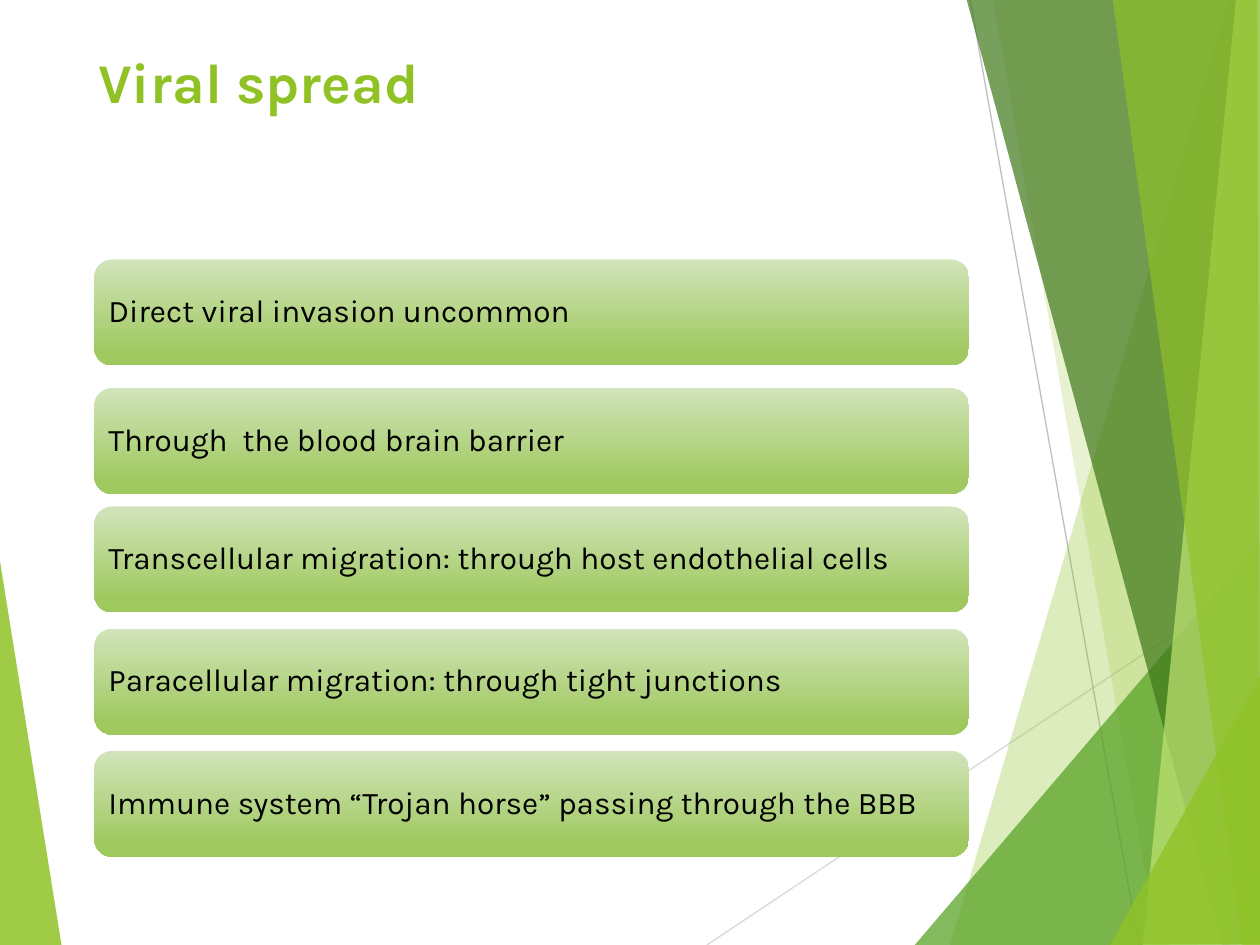
from dataclasses import dataclass

from lxml.etree import SubElement
from pptx import Presentation
from pptx.dml.color import RGBColor
from pptx.enum.shapes import MSO_CONNECTOR, MSO_SHAPE
from pptx.enum.text import MSO_ANCHOR, PP_ALIGN
from pptx.oxml.ns import qn
from pptx.slide import Slide
from pptx.util import Inches, Pt

Point = tuple[float, float]


@dataclass(frozen=True)
class Theme:
    font: str = "Karla"
    title_size: int = 32
    body_size: int = 18
    title: str = "90C226"
    text: str = "000000"
    lime: str = "90C226"
    green: str = "54A021"
    forest: str = "3F7819"
    pale: str = "C0E474"
    card_top: str = "D2E4BB"
    card_bottom: str = "9FC95F"
    light_line: str = "D9D9D9"
    dark_line: str = "BFBFBF"


@dataclass(frozen=True)
class Facet:
    color: str
    opacity: int
    points: tuple[Point, ...]


@dataclass(frozen=True)
class Ray:
    color: str
    start: Point
    end: Point


@dataclass(frozen=True)
class Card:
    top: float
    text: str


THEME = Theme()

LEFT_FACET = Facet(THEME.lime, 85, ((-0.01, 4.39), (0.49, 7.51), (-0.01, 7.5)))

RAYS = (
    Ray(THEME.light_line, (5.61, 7.5), (10.01, 4.57)),
    Ray(THEME.dark_line, (7.7, 0), (9.04, 7.5)),
)

RIGHT_FACETS = (
    Facet(THEME.lime, 30, ((9.75, 0), (7.54, 7.5), (10.02, 7.51), (10.01, 0.01))),
    Facet(THEME.lime, 20, ((7.88, -0.01), (9.19, 7.5), (10.01, 7.5), (10.01, -0.01))),
    Facet(THEME.green, 72, ((7.26, 7.5), (10, 4.29), (10.01, 7.5))),
    Facet(THEME.forest, 70, ((7.67, -0.01), (9.7, 7.5), (10.01, 7.49), (10.01, -0.01))),
    Facet(THEME.pale, 70, ((9.81, -0.01), (9.07, 7.5), (10.01, 7.5), (10, -0.01))),
    Facet(THEME.lime, 65, ((8.83, -0.01), (9.86, 7.5), (10, 7.5), (9.98, -0.01))),
    Facet(THEME.lime, 80, ((8.81, 7.5), (10.01, 5.35), (10.01, 7.49))),
)

CARDS = (
    Card(2.06, "Direct viral invasion uncommon"),
    Card(3.08, "Through  the blood brain barrier"),
    Card(4.02, "Transcellular migration: through host endothelial cells"),
    Card(4.99, "Paracellular migration: through tight junctions"),
    Card(5.96, "Immune system “Trojan horse” passing through the BBB"),
)


def draw_facet(page: Slide, facet: Facet) -> None:
    corners = [(Inches(x), Inches(y)) for x, y in facet.points]
    builder = page.shapes.build_freeform(*corners[0])
    builder.add_line_segments(corners[1:], close=True)
    shape = builder.convert_to_shape()
    shape.shadow.inherit = False
    shape.line.fill.background()
    shape.fill.solid()
    shape.fill.fore_color.rgb = RGBColor.from_string(facet.color)
    for color in shape.element.spPr.iter(qn("a:srgbClr")):
        SubElement(color, qn("a:alpha"), val=str(facet.opacity * 1000))


def draw_ray(page: Slide, ray: Ray) -> None:
    ends = [Inches(value) for value in ray.start + ray.end]
    line = page.shapes.add_connector(MSO_CONNECTOR.STRAIGHT, *ends)
    line.line.color.rgb = RGBColor.from_string(ray.color)
    line.line.width = Pt(0.75)
    SubElement(line.element.spPr, qn("a:effectLst"))


def draw_title(page: Slide, text: str) -> None:
    title = page.shapes.title
    title.left, title.top = Inches(0.73), Inches(0.33)
    title.width, title.height = Inches(6.94), Inches(1.44)
    frame = title.text_frame
    frame.text = text
    frame.vertical_anchor = MSO_ANCHOR.TOP
    frame.margin_left = frame.margin_right = Inches(0.05)
    frame.margin_top = frame.margin_bottom = Inches(0.05)
    para = frame.paragraphs[0]
    para.alignment = PP_ALIGN.LEFT
    para.font.name = THEME.font
    para.font.size = Pt(THEME.title_size)
    para.font.bold = True
    para.font.color.rgb = RGBColor.from_string(THEME.title)


def draw_card(page: Slide, card: Card) -> None:
    box = page.shapes.add_shape(
        MSO_SHAPE.ROUNDED_RECTANGLE,
        Inches(0.75), Inches(card.top), Inches(6.94), Inches(0.84),
    )
    box.shadow.inherit = False
    box.line.fill.background()
    box.fill.gradient()
    box.fill.gradient_angle = 270
    shades = ((0, THEME.card_top), (0.88, THEME.card_bottom))
    for stop, (position, color) in zip(box.fill.gradient_stops, shades):
        stop.position = position
        stop.color.rgb = RGBColor.from_string(color)
    frame = box.text_frame
    frame.text = card.text
    frame.word_wrap = True
    frame.vertical_anchor = MSO_ANCHOR.MIDDLE
    frame.margin_left = frame.margin_right = Inches(0.07)
    frame.margin_top = frame.margin_bottom = Inches(0.07)
    para = frame.paragraphs[0]
    para.alignment = PP_ALIGN.LEFT
    para.line_spacing = 0.9
    para.font.name = THEME.font
    para.font.size = Pt(THEME.body_size)
    para.font.color.rgb = RGBColor.from_string(THEME.text)


def main() -> None:
    deck = Presentation()
    deck.slide_width, deck.slide_height = Inches(10), Inches(7.5)
    page = deck.slides.add_slide(deck.slide_layouts.get_by_name("Title Only"))
    draw_facet(page, LEFT_FACET)
    for ray in RAYS:
        draw_ray(page, ray)
    for facet in RIGHT_FACETS:
        draw_facet(page, facet)
    draw_title(page, "Viral spread")
    for card in CARDS:
        draw_card(page, card)
    deck.save("out.pptx")


if __name__ == "__main__":
    main()
